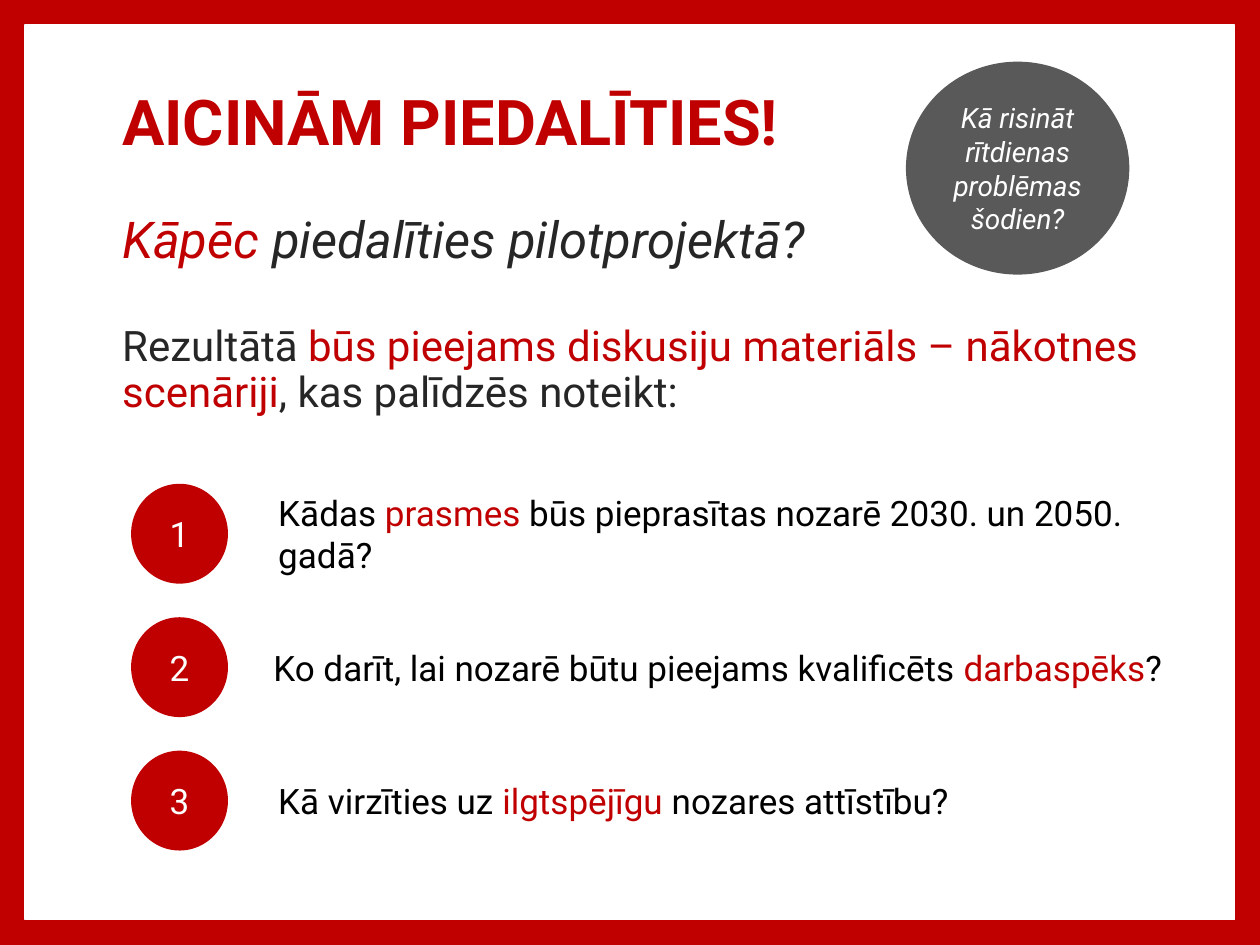
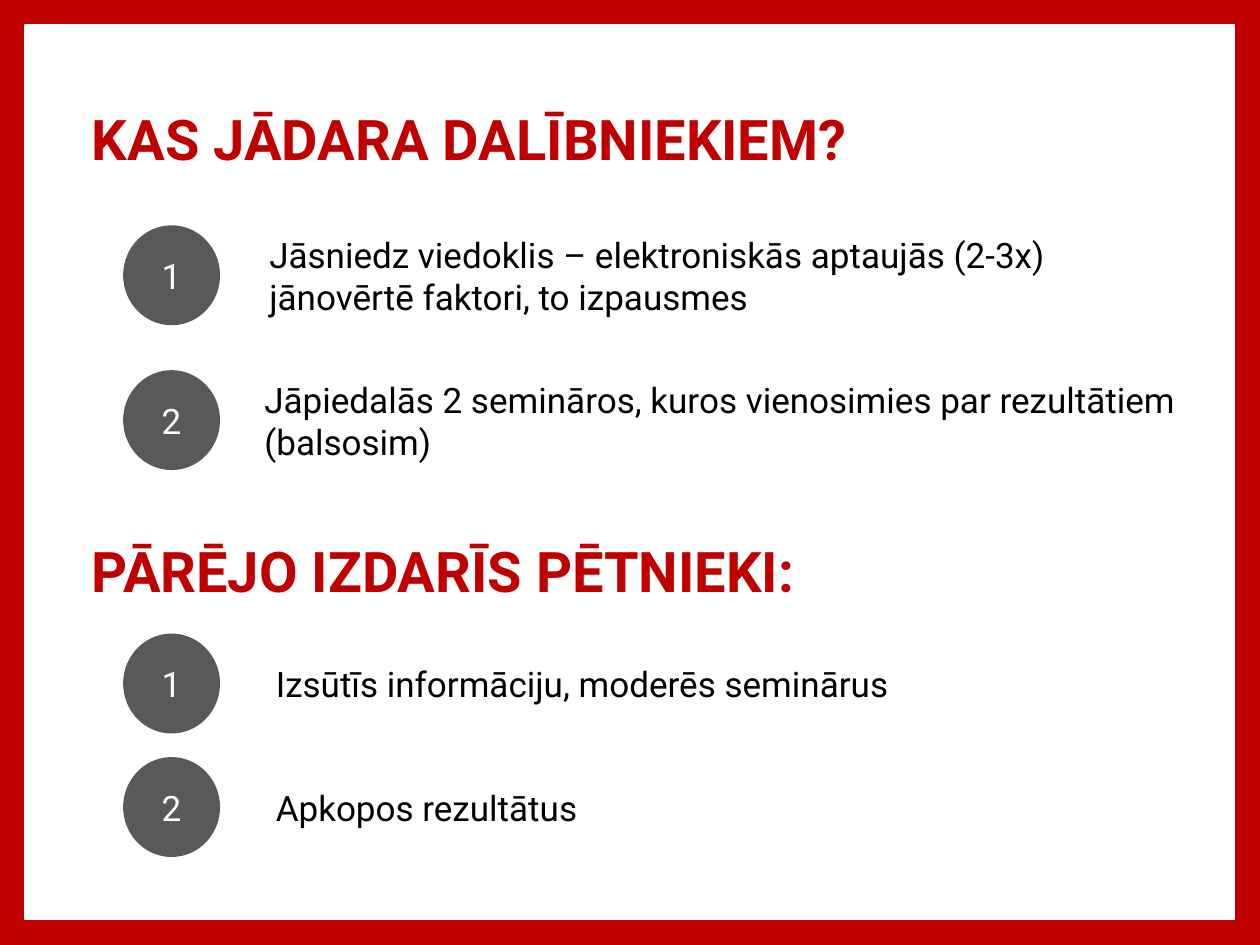
from pptx import Presentation
from pptx.dml.color import RGBColor
from pptx.enum.shapes import MSO_SHAPE as Shape
from pptx.enum.text import MSO_ANCHOR as Anchor, MSO_AUTO_SIZE as AutoSize, PP_ALIGN as Align
from pptx.util import Cm, Pt

RED = RGBColor(0xC0, 0x00, 0x00)
GREY = RGBColor(0x59, 0x59, 0x59)
INK = RGBColor(0x26, 0x26, 0x26)
BLACK = RGBColor(0x00, 0x00, 0x00)
WHITE = RGBColor(0xFF, 0xFF, 0xFF)
FONT = "Roboto"

# Content: a line of text is a list of (words, colour) runs
INVITATION = [
    ([("AICINĀM PIEDALĪTIES!", RED)], dict(size=36, bold=True)),
    ([("Kāpēc ", RED), ("piedalīties pilotprojektā?", INK)], dict(size=29, italic=True)),
    ([("Rezultātā ", INK),
      ("būs pieejams diskusiju materiāls – nākotnes scenāriji", RED),
      (", kas palīdzēs noteikt:", INK)], dict(size=24)),
]
SLOGAN = "Kā risināt rītdienas problēmas šodien?"

# Each numbered item: text left (cm), number of lines, runs
QUESTIONS = [
    (5.36, 2, [("Kādas ", BLACK), ("prasmes", RED),
               (" būs pieprasītas nozarē 2030. un 2050. gadā?", BLACK)]),
    (5.26, 1, [("Ko darīt, lai nozarē būtu pieejams kvalificēts ", BLACK),
               ("darbaspēks", RED), ("?", BLACK)]),
    (5.36, 1, [("Kā virzīties uz ", BLACK), ("ilgtspējīgu ", RED),
               ("nozares attīstību?", BLACK)]),
]
PARTICIPANTS_TITLE = "KAS JĀDARA DALĪBNIEKIEM?"
PARTICIPANT_TASKS = [
    (5.18, 2, [("Jāsniedz viedoklis – elektroniskās aptaujās (2-3x) "
                "jānovērtē faktori, to izpausmes", BLACK)]),
    (5.08, 2, [("Jāpiedalās 2 semināros, kuros vienosimies par rezultātiem "
                "(balsosim)", BLACK)]),
]
RESEARCHERS_TITLE = "PĀRĒJO IZDARĪS PĒTNIEKI:"
RESEARCHER_TASKS = [
    (5.31, 1, [("Izsūtīs informāciju, moderēs seminārus", BLACK)]),
    (5.31, 1, [("Apkopos rezultātus", BLACK)]),
]

# Shared measures in cm
SLIDE_W, SLIDE_H, BORDER = 25.4, 19.05, 0.51
NUMBER_W, NUMBER_H = 1.9, 1.96
TEXT_W = 19.05
TEXT_H = {1: 1.12, 2: 1.96}
HEADING_LEFT, HEADING_W, HEADING_H = 1.6, 23.19, 2.44


def place(shape, left, top, width, height):
    shape.left, shape.top, shape.width, shape.height = map(Cm, (left, top, width, height))


def write(paragraph, runs, size, bold=False, italic=False):
    for words, colour in runs:
        run = paragraph.add_run()
        run.text = words
        font = run.font
        font.name, font.size, font.bold, font.italic = FONT, Pt(size), bold, italic
        font.color.rgb = colour


def prepare(shape, anchor=Anchor.MIDDLE):
    frame = shape.text_frame
    frame.word_wrap = True
    frame.auto_size = AutoSize.NONE
    frame.vertical_anchor = anchor
    return frame


def add_filled(slide, kind, colour, line_width, *box):
    shape = slide.shapes.add_shape(kind, *map(Cm, box))
    shape.shadow.inherit = False
    shape.fill.solid()
    shape.fill.fore_color.rgb = colour
    shape.line.color.rgb = colour
    shape.line.width = Pt(line_width)
    return shape


def add_circle(slide, box, colour, words, size, italic=False):
    circle = add_filled(slide, Shape.FLOWCHART_CONNECTOR, colour, 1.5, *box)
    paragraph = prepare(circle).paragraphs[0]
    paragraph.alignment = Align.CENTER
    write(paragraph, [(words, WHITE)], size, italic=italic)


def add_numbered(slide, items, number_left, first_middle, pitch, colour):
    for index, (text_left, lines, runs) in enumerate(items):
        middle = first_middle + index * pitch
        height = TEXT_H[lines]
        answer = slide.shapes.add_textbox(
            *map(Cm, (text_left, middle - height / 2, TEXT_W, height)))
        write(prepare(answer).paragraphs[0], runs, 20)
        number_box = (number_left, middle - NUMBER_H / 2, NUMBER_W, NUMBER_H)
        add_circle(slide, number_box, colour, str(index + 1), 20)


def write_heading(shape, words, top):
    place(shape, HEADING_LEFT, top, HEADING_W, HEADING_H)
    paragraph = prepare(shape).paragraphs[0]
    paragraph.alignment = Align.LEFT
    paragraph.line_spacing = 0.9
    write(paragraph, [(words, RED)], 32, bold=True)


def add_frame(layout, slide):
    """Give the layout a red background and a white panel behind everything."""
    layout.background.fill.solid()
    layout.background.fill.fore_color.rgb = RED
    panel = add_filled(slide, Shape.RECTANGLE, WHITE, 1, BORDER, BORDER,
                       SLIDE_W - 2 * BORDER, SLIDE_H - 2 * BORDER)
    layout.shapes.element.insert(2, panel.element)


def build_invitation(slide):
    title = slide.shapes.title
    place(title, 2.21, 1.7, 22.2, 7.37)
    frame = prepare(title, Anchor.TOP)
    for index, (runs, style) in enumerate(INVITATION):
        paragraph = frame.add_paragraph() if index else frame.paragraphs[0]
        paragraph.alignment = Align.LEFT
        paragraph.line_spacing = 0.9
        paragraph.space_before = Pt(32 if index else 0)
        write(paragraph, runs, **style)
    add_numbered(slide, QUESTIONS, 2.67, 10.76, 2.69, RED)
    add_circle(slide, (18.29, 1.27, 4.45, 4.24), GREY, SLOGAN, 16, italic=True)


def build_tasks(slide):
    write_heading(slide.shapes.title, PARTICIPANTS_TITLE, 1.65)
    add_numbered(slide, PARTICIPANT_TASKS, 2.51, 5.55, 2.92, GREY)
    researchers = slide.shapes.add_textbox(0, 0, 0, 0)
    write_heading(researchers, RESEARCHERS_TITLE, 10.36)
    add_numbered(slide, RESEARCHER_TASKS, 2.51, 13.78, 2.49, GREY)


def main():
    deck = Presentation()
    deck.slide_width, deck.slide_height = Cm(SLIDE_W), Cm(SLIDE_H)
    title_only = deck.slide_layouts[5]
    invitation, tasks = (deck.slides.add_slide(title_only) for _ in range(2))
    add_frame(title_only, invitation)
    build_invitation(invitation)
    build_tasks(tasks)
    deck.save("out.pptx")


if __name__ == "__main__":
    main()
